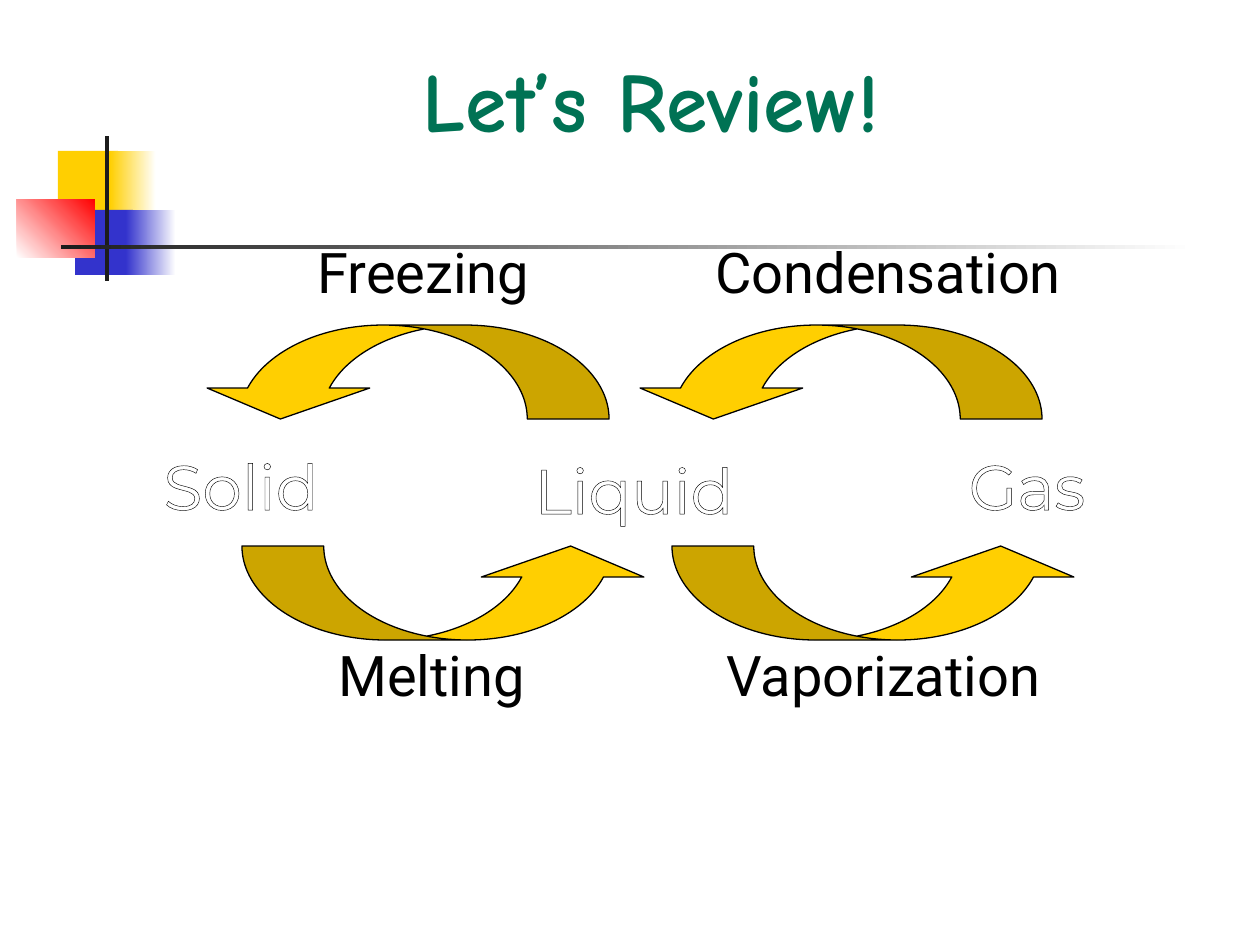
from lxml.etree import SubElement
from pptx import Presentation
from pptx.dml.color import RGBColor
from pptx.enum.shapes import MSO_SHAPE
from pptx.enum.text import MSO_ANCHOR, MSO_AUTO_SIZE, PP_ALIGN
from pptx.oxml.ns import qn
from pptx.util import Emu, Pt

WHITE = RGBColor(0xFF, 0xFF, 0xFF)
BLACK = RGBColor(0x00, 0x00, 0x00)
YELLOW = RGBColor(0xFF, 0xCF, 0x01)
BLUE = RGBColor(0x33, 0x33, 0xCC)
RED = RGBColor(0xFF, 0x00, 0x00)
CHARCOAL = RGBColor(0x1C, 0x1C, 0x1C)
GREEN = RGBColor(0x00, 0x72, 0x54)

SCALE = 914400 / 126


def px(*values):
    return [Emu(round(v * SCALE)) for v in values]


class SlideBuilder:
    title_font = "Comic Neue"
    state_font = "Montserrat"
    label_font = "Roboto"

    def __init__(self, prs):
        self.s = prs.slides.add_slide(prs.slide_layouts[5])

    def add_text(self, tf, text, font, size, color, align=PP_ALIGN.LEFT, bold=False):
        tf.vertical_anchor = MSO_ANCHOR.TOP
        p = tf.paragraphs[0]
        p.alignment = align
        r = p.add_run()
        r.text = text
        r.font.name = font
        r.font.size = Pt(size)
        r.font.bold = bold
        r.font.color.rgb = color
        return r

    def title(self, text, *box):
        sp = self.s.shapes.title
        sp.left, sp.top, sp.width, sp.height = px(*box)
        tf = sp.text_frame
        tf.word_wrap = True
        tf.auto_size = MSO_AUTO_SIZE.NONE
        self.add_text(tf, text, self.title_font, 48, GREEN, PP_ALIGN.CENTER, True)

    def shape(self, kind, box):
        sp = self.s.shapes.add_shape(kind, *px(*box))
        sp.shadow.inherit = False
        return sp

    def block(self, box, color, end=None, angle=0):
        sp = self.shape(MSO_SHAPE.RECTANGLE, box)
        sp.line.fill.background()
        if end is None:
            sp.fill.solid()
            sp.fill.fore_color.rgb = color
            return
        sp.fill.gradient()
        sp.fill.gradient_angle = angle
        for stop, stop_color in zip(sp.fill.gradient_stops, (color, end)):
            stop.color.rgb = stop_color

    def arrow(self, left, top, rotation=0):
        sp = self.shape(MSO_SHAPE.CURVED_UP_ARROW, (left, top, 410, 94))
        sp.rotation = rotation
        for i, value in enumerate((0.87, 1.73, 0.33)):
            sp.adjustments[i] = value
        sp.fill.solid()
        sp.fill.fore_color.rgb = YELLOW
        sp.line.color.rgb = BLACK
        sp.line.width = Pt(0.75)

    def label(self, text, left, top, width):
        tf = self.s.shapes.add_textbox(*px(left, top, width, 79)).text_frame
        tf.word_wrap = True
        tf.auto_size = MSO_AUTO_SIZE.SHAPE_TO_FIT_TEXT
        self.add_text(tf, text, self.label_font, 32, BLACK)

    def state(self, text, *box):
        tf = self.s.shapes.add_textbox(*px(*box)).text_frame
        tf.word_wrap = False
        r = self.add_text(tf, text, self.state_font, 36, WHITE, PP_ALIGN.CENTER)
        rPr = r._r.get_or_add_rPr()
        ln = SubElement(rPr, qn("a:ln"), w=str(Pt(0.75)))
        fill = SubElement(ln, qn("a:solidFill"))
        SubElement(fill, qn("a:srgbClr"), val=str(BLACK))
        rPr.insert(0, ln)


def main():
    prs = Presentation()
    prs.slide_width, prs.slide_height = px(1260, 945)
    slide = SlideBuilder(prs)

    slide.block((58, 151, 60, 66), YELLOW)
    slide.block((110, 151, 46, 66), YELLOW, WHITE)
    slide.block((75, 210, 58, 65), BLUE)
    slide.block((126, 210, 50, 65), BLUE, WHITE)
    slide.block((17, 199, 78, 59), WHITE, RED, 45)
    slide.block((105, 136, 4, 145), CHARCOAL)
    slide.block((61, 245, 1134, 4), CHARCOAL, WHITE)

    slide.title("Let’s Review!", 168, 42, 966, 113)

    for left in (199, 632):
        slide.arrow(left, 325, 180)
    for left in (242, 672):
        slide.arrow(left, 546)

    slide.state("Solid", 136, 441, 210, 94)
    slide.state("Liquid", 513, 445, 242, 105)
    slide.state("Gas", 941, 441, 172, 89)

    slide.label("Freezing", 305, 231, 284)
    slide.label("Condensation", 703, 231, 441)
    slide.label("Melting", 326, 634, 315)
    slide.label("Vaporization", 714, 634, 441)

    prs.save("out.pptx")


if __name__ == "__main__":
    main()
